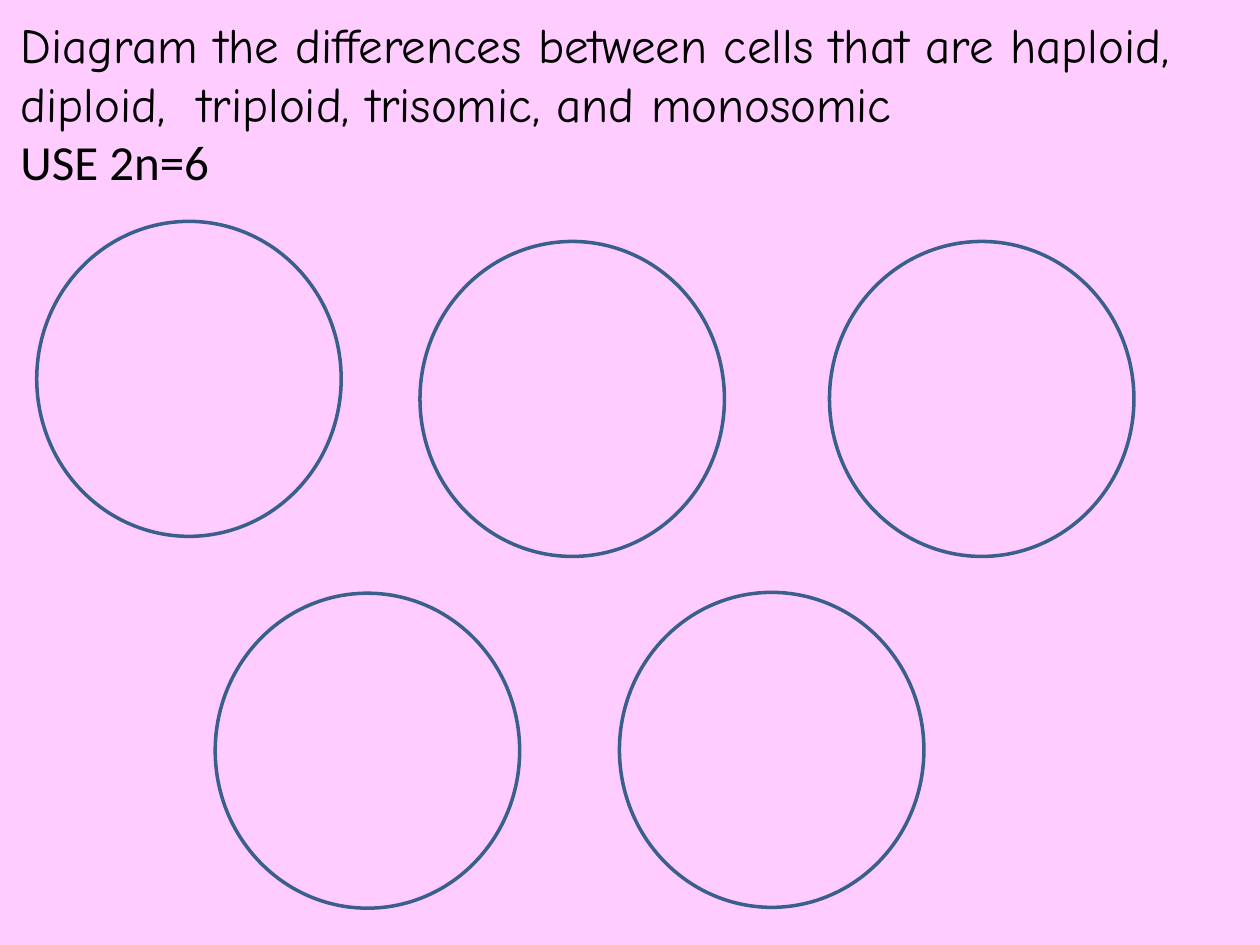
import pptx
import pptx.util
import pptx.dml.color
import pptx.enum.shapes
import pptx.enum.text

Pt = pptx.util.Pt

LINES = [
    ("Diagram the differences between cells that are haploid, diploid,  "
     "triploid, trisomic, and monosomic", "Comic Neue"),
    ("USE 2n=6", "Calibri"),
]
CELLS = [(21, 126.5), (240, 138), (474, 138), (123, 339), (354, 338.5)]
WIDTH, HEIGHT = 174, 180


def color(code):
    return pptx.dml.color.RGBColor.from_string(code)


def write_title(slide):
    title = slide.shapes.title
    title.left, title.top = Pt(4.5), Pt(4.5)
    title.width, title.height = Pt(715.5), Pt(109)
    frame = title.text_frame
    frame.word_wrap = True
    frame.auto_size = pptx.enum.text.MSO_AUTO_SIZE.SHAPE_TO_FIT_TEXT
    frame.vertical_anchor = pptx.enum.text.MSO_ANCHOR.TOP
    for index, (text, face) in enumerate(LINES):
        para = frame.add_paragraph() if index else frame.paragraphs[0]
        para.alignment = pptx.enum.text.PP_ALIGN.LEFT
        run = para.add_run()
        run.text = text
        run.font.name = face
        run.font.size = Pt(28)
        run.font.color.rgb = color("000000")


def draw_cell(slide, left, top):
    cell = slide.shapes.add_shape(
        pptx.enum.shapes.MSO_SHAPE.OVAL,
        Pt(left), Pt(top), Pt(WIDTH), Pt(HEIGHT))
    cell.shadow.inherit = False
    cell.fill.background()
    cell.line.color.rgb = color("3A5F8C")
    cell.line.width = Pt(2)


def main():
    deck = pptx.Presentation()
    deck.slide_width, deck.slide_height = Pt(720), Pt(540)
    slide = deck.slides.add_slide(deck.slide_layouts[5])
    back = slide.background.fill
    back.solid()
    back.fore_color.rgb = color("FFCCFF")
    write_title(slide)
    for left, top in CELLS:
        draw_cell(slide, left, top)
    deck.save("out.pptx")


if __name__ == "__main__":
    main()
